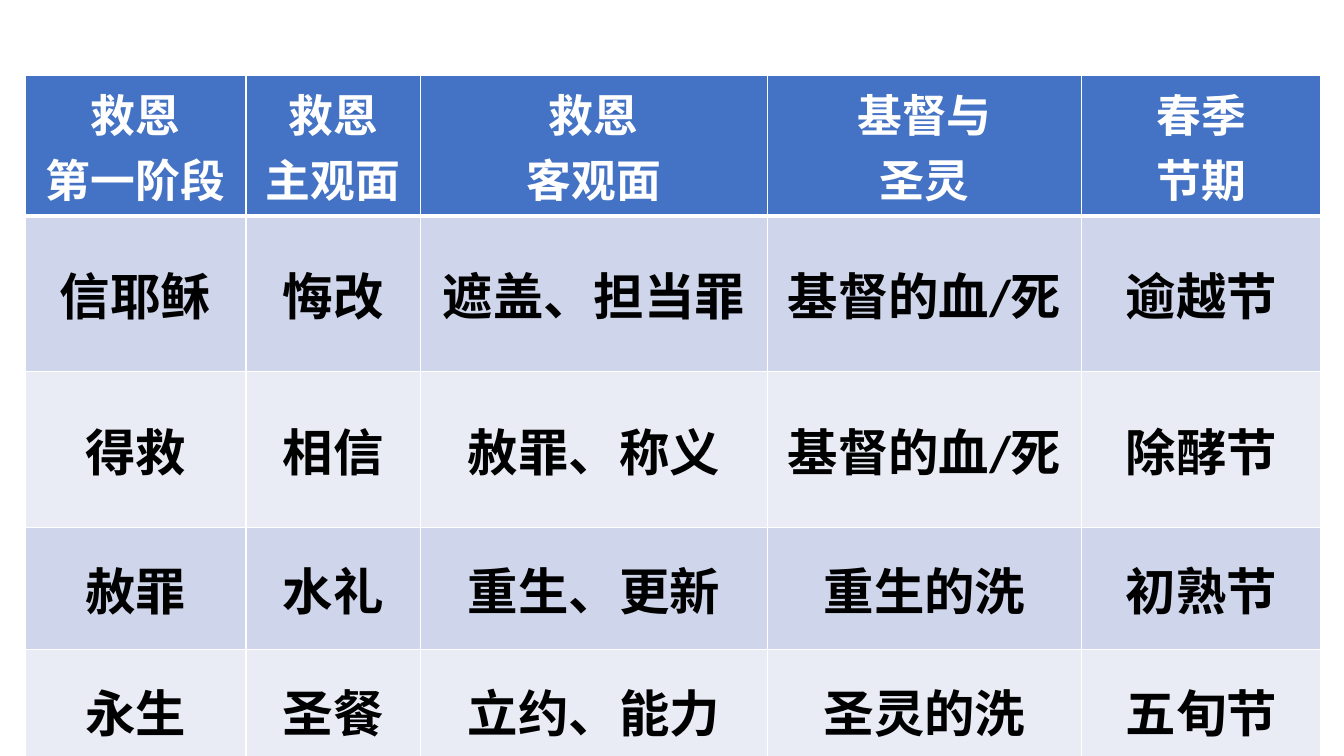
from dataclasses import dataclass

from lxml import etree
from pptx import Presentation
from pptx.dml import color
from pptx.enum import text
from pptx.oxml import ns
from pptx.util import Inches, Pt

WHITE = "FFFFFF"
COLUMN_WIDTHS = [2.19, 1.73, 3.44, 3.12, 2.37]
HEADER_HEIGHT = 1.28
BODY_HEIGHT = 1.21


@dataclass
class RowStyle:
    fill: str
    font_color: str
    size: int
    anchor: text.MSO_ANCHOR
    top_border: int = 1
    bottom_border: int = 1


HEADER = RowStyle("4472C4", WHITE, 32, text.MSO_ANCHOR.TOP, bottom_border=3)
FIRST = RowStyle("CFD5EA", "000000", 36, text.MSO_ANCHOR.MIDDLE, top_border=3)
ODD = RowStyle("CFD5EA", "000000", 36, text.MSO_ANCHOR.MIDDLE)
EVEN = RowStyle("E9EBF5", "000000", 36, text.MSO_ANCHOR.MIDDLE)

ROWS = [
    (HEADER, ["救恩\n第一阶段", "救恩\n主观面", "救恩\n客观面", "基督与\n圣灵", "春季\n节期"]),
    (FIRST, ["信耶稣", "悔改", "遮盖、担当罪", "基督的血/死", "逾越节"]),
    (EVEN, ["得救", "相信", "赦罪、称义", "基督的血/死", "除酵节"]),
    (ODD, ["赦罪", "水礼", "重生、更新", "重生的洗", "初熟节"]),
    (EVEN, ["永生", "圣餐", "立约、能力", "圣灵的洗", "五旬节"]),
]


def rgb(value: str) -> color.RGBColor:
    return color.RGBColor.from_string(value)


def add_borders(cell, style: RowStyle) -> None:
    properties = cell._tc.get_or_add_tcPr()
    widths = {"lnL": 1, "lnR": 1, "lnT": style.top_border, "lnB": style.bottom_border}
    for tag, width in widths.items():
        line = etree.SubElement(properties, ns.qn(f"a:{tag}"), w=str(Pt(width)))
        fill = etree.SubElement(line, ns.qn("a:solidFill"))
        etree.SubElement(fill, ns.qn("a:srgbClr"), val=WHITE)


def fill_cell(cell, content: str, style: RowStyle) -> None:
    add_borders(cell, style)
    cell.fill.solid()
    cell.fill.fore_color.rgb = rgb(style.fill)
    cell.vertical_anchor = style.anchor
    frame = cell.text_frame
    for index, line in enumerate(content.split("\n")):
        paragraph = frame.add_paragraph() if index else frame.paragraphs[0]
        paragraph.alignment = text.PP_ALIGN.CENTER
        run = paragraph.add_run()
        run.text = line
        run.font.name = "Calibri"
        run.font.size = Pt(style.size)
        run.font.bold = True
        run.font.color.rgb = rgb(style.font_color)


def main() -> None:
    presentation = Presentation()
    presentation.slide_width = Inches(13.33)
    presentation.slide_height = Inches(7.5)
    slide = presentation.slides.add_slide(presentation.slide_layouts[6])
    height = HEADER_HEIGHT + BODY_HEIGHT * (len(ROWS) - 1)
    table = slide.shapes.add_table(
        len(ROWS), len(COLUMN_WIDTHS),
        Inches(0.25), Inches(0.75), Inches(sum(COLUMN_WIDTHS)), Inches(height),
    ).table
    for column, width in zip(table.columns, COLUMN_WIDTHS):
        column.width = Inches(width)
    for row, (style, contents) in zip(table.rows, ROWS):
        row.height = Inches(HEADER_HEIGHT if style is HEADER else BODY_HEIGHT)
        for cell, content in zip(row.cells, contents):
            fill_cell(cell, content, style)
    presentation.save("out.pptx")


if __name__ == "__main__":
    main()
